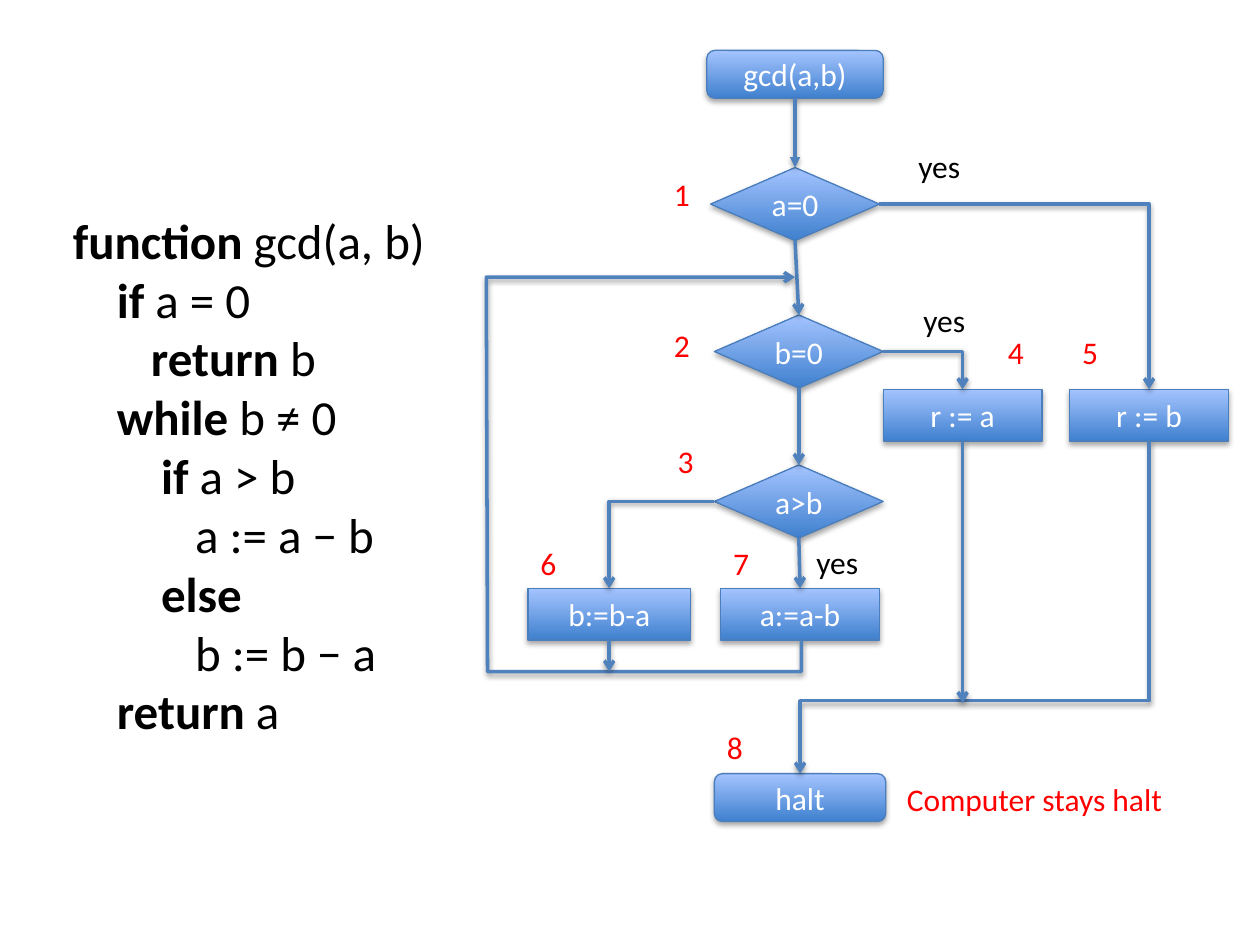
"""Build a slide pairing the gcd pseudocode with its numbered flowchart."""
from lxml import etree
from pptx import Presentation
from pptx import util as u
from pptx.dml.color import RGBColor
from pptx.enum import shapes, text
from pptx.oxml import ns

BLACK = RGBColor(0x00, 0x00, 0x00)
WHITE = RGBColor(0xFF, 0xFF, 0xFF)
RED = RGBColor(0xFF, 0x00, 0x00)
DARK = RGBColor(0x3F, 0x80, 0xCE)
LIGHT = RGBColor(0xA4, 0xC4, 0xFF)
OUTLINE = RGBColor(0x4B, 0x7E, 0xBC)
ARROW = RGBColor(0x4F, 0x81, 0xBD)
FONT = "Calibri"

CODE = [
    (0, "function", " gcd(a, b)"),
    (0.35, "if", " a = 0"),
    (0.62, "return", " b"),
    (0.35, "while", " b ≠ 0"),
    (0.7, "if", " a > b"),
    (0.97, "", "a := a − b"),
    (0.7, "else", ""),
    (0.97, "", "b := b − a"),
    (0.35, "return", " a"),
]

TERMINAL = shapes.MSO_SHAPE.FLOWCHART_ALTERNATE_PROCESS
DECISION = shapes.MSO_SHAPE.DIAMOND
PROCESS = shapes.MSO_SHAPE.RECTANGLE
NODES = {
    "start": ("gcd(a,b)", TERMINAL, 5.61, 0.4, 1.4, 0.38),
    "a zero": ("a=0", DECISION, 5.64, 1.33, 1.34, 0.58),
    "b zero": ("b=0", DECISION, 5.67, 2.5, 1.34, 0.58),
    "a larger": ("a>b", DECISION, 5.67, 3.69, 1.34, 0.58),
    "result a": ("r := a", PROCESS, 7.01, 3.09, 1.26, 0.41),
    "result b": ("r := b", PROCESS, 8.49, 3.09, 1.26, 0.41),
    "cut b": ("b:=b-a", PROCESS, 4.19, 4.67, 1.29, 0.41),
    "cut a": ("a:=a-b", PROCESS, 5.72, 4.67, 1.26, 0.41),
    "halt": ("halt", TERMINAL, 5.67, 6.14, 1.36, 0.38),
}

TOP, LEFT, BOTTOM, RIGHT = range(4)
STRAIGHT_EDGES = [
    ("start", "a zero", "triangle"),
    ("a zero", "b zero", "arrow"),
    ("b zero", "a larger", "arrow"),
    ("a larger", "cut a", "arrow"),
]
BENT_EDGES = [
    ("a zero", RIGHT, "result b"),
    ("b zero", RIGHT, "result a"),
    ("a larger", LEFT, "cut b"),
]
MERGES = [("result a", 5.58), ("cut b", 5.33)]
LOOP = [(6.36, 5.08), (6.36, 5.33), (3.87, 5.33), (3.86, 2.2), (6.31, 2.2)]
EXIT_BEND = 78100

LABELS = [
    ("1", 5.25, 1.34, 0.33, RED),
    ("2", 5.25, 2.54, 0.33, RED),
    ("3", 5.28, 3.46, 0.33, RED),
    ("4", 7.9, 2.59, 0.33, RED),
    ("5", 8.49, 2.59, 0.33, RED),
    ("6", 4.19, 4.27, 0.33, RED),
    ("7", 5.72, 4.27, 0.33, RED),
    ("8", 5.67, 5.73, 0.33, RED),
    ("Computer stays halt", 7.1, 6.14, 2.26, RED),
    ("yes", 7.19, 1.12, 0.72, BLACK),
    ("yes", 7.23, 2.34, 0.72, BLACK),
    ("yes", 6.38, 4.26, 0.72, BLACK),
]


def add_xml(parent, tag, **attrs):
    return etree.SubElement(parent, ns.qn(tag), attrs)


def add_shadow(sp, dist, alpha):
    effects = add_xml(sp._element.spPr, "a:effectLst")
    shadow = add_xml(effects, "a:outerShdw", blurRad="40000", dist=str(dist),
                     dir="5400000", rotWithShape="0")
    color = add_xml(shadow, "a:srgbClr", val="000000")
    add_xml(color, "a:alpha", val=str(alpha * 1000))


def style_run(r, size, color, bold=False):
    r.font.name = FONT
    r.font.size = u.Pt(size)
    r.font.color.rgb = color
    r.font.bold = bold


def style_arrow(sp, head="arrow"):
    sp.line.color.rgb = ARROW
    sp.line.width = u.Pt(2)
    add_xml(sp.line._get_or_add_ln(), "a:tailEnd", type=head)
    add_shadow(sp, 20000, 38)


def add_code(s):
    tf = s.shapes.add_textbox(*map(u.Inches, (0.48, 1.62, 3.6, 4.34))).text_frame
    tf.word_wrap = True
    for i, (indent, keyword, rest) in enumerate(CODE):
        p = tf.paragraphs[0] if i == 0 else tf.add_paragraph()
        p._p.get_or_add_pPr().set("marL", str(u.Inches(indent)))
        for part, bold in ((keyword, True), (rest, False)):
            if part:
                r = p.add_run()
                r.text = part
                style_run(r, 28, BLACK, bold)


def add_label(s, label, x, y, width, color):
    tf = s.shapes.add_textbox(*map(u.Inches, (x, y, width, 0.4))).text_frame
    tf.word_wrap = False
    tf.text = label
    style_run(tf.paragraphs[0].runs[0], 18, color)


def add_node(s, label, kind, *box):
    sp = s.shapes.add_shape(kind, *map(u.Inches, box))
    sp.fill.gradient()
    sp.fill.gradient_angle = 90
    for stop, color in zip(sp.fill.gradient_stops, (DARK, LIGHT)):
        stop.color.rgb = color
    sp.line.color.rgb = OUTLINE
    sp.line.width = u.Pt(0.75)
    add_shadow(sp, 23000, 35)
    tf = sp.text_frame
    tf.vertical_anchor = text.MSO_ANCHOR.MIDDLE
    tf.text = label
    p = tf.paragraphs[0]
    p.alignment = text.PP_ALIGN.CENTER
    style_run(p.runs[0], 18, WHITE)
    return sp


def site(sp, side):
    middle_x, middle_y = sp.left + sp.width // 2, sp.top + sp.height // 2
    return {
        TOP: (middle_x, sp.top),
        LEFT: (sp.left, middle_y),
        BOTTOM: (middle_x, sp.top + sp.height),
        RIGHT: (sp.left + sp.width, middle_y),
    }[side]


def connect(s, kind, first, side, second, head="arrow"):
    c = s.shapes.add_connector(kind, *site(first, side), *site(second, TOP))
    c.begin_connect(first, side)
    c.end_connect(second, TOP)
    style_arrow(c, head)
    return c


def add_exit(s, first, second):
    (x1, y1), (x2, y2) = site(first, BOTTOM), site(second, TOP)
    width, height = y2 - y1, x1 - x2
    left, top = (x1 + x2 - width) // 2, (y1 + y2 - height) // 2
    c = s.shapes.add_connector(shapes.MSO_CONNECTOR.ELBOW, left, top,
                               left + width, top + height)
    spPr = c._element.spPr
    spPr.find(ns.qn("a:xfrm")).set("rot", "5400000")
    guides = spPr.find(ns.qn("a:prstGeom")).find(ns.qn("a:avLst"))
    add_xml(guides, "a:gd", name="adj1", fmla=f"val {EXIT_BEND}")
    style_arrow(c)


def add_loop(s):
    points = [(u.Inches(x), u.Inches(y)) for x, y in LOOP]
    builder = s.shapes.build_freeform(*points[0])
    builder.add_line_segments(points[1:], close=False)
    sp = builder.convert_to_shape()
    sp.fill.background()
    style_arrow(sp)


def main():
    prs = Presentation()
    prs.slide_width, prs.slide_height = u.Inches(10), u.Inches(7.5)
    s = prs.slides.add_slide(prs.slide_layouts[6])
    add_code(s)
    nodes = {name: add_node(s, *node) for name, node in NODES.items()}
    line, elbow = shapes.MSO_CONNECTOR.STRAIGHT, shapes.MSO_CONNECTOR.ELBOW
    for first, second, head in STRAIGHT_EDGES:
        connect(s, line, nodes[first], BOTTOM, nodes[second], head)
    for first, side, second in BENT_EDGES:
        c = connect(s, elbow, nodes[first], side, nodes[second])
        c._element.spPr.find(ns.qn("a:prstGeom")).set("prst", "bentConnector2")
    add_exit(s, nodes["result b"], nodes["halt"])
    add_loop(s)
    for name, end in MERGES:
        x, y = site(nodes[name], BOTTOM)
        style_arrow(s.shapes.add_connector(line, x, y, x, u.Inches(end)))
    for label in LABELS:
        add_label(s, *label)
    prs.save("out.pptx")


if __name__ == "__main__":
    main()
